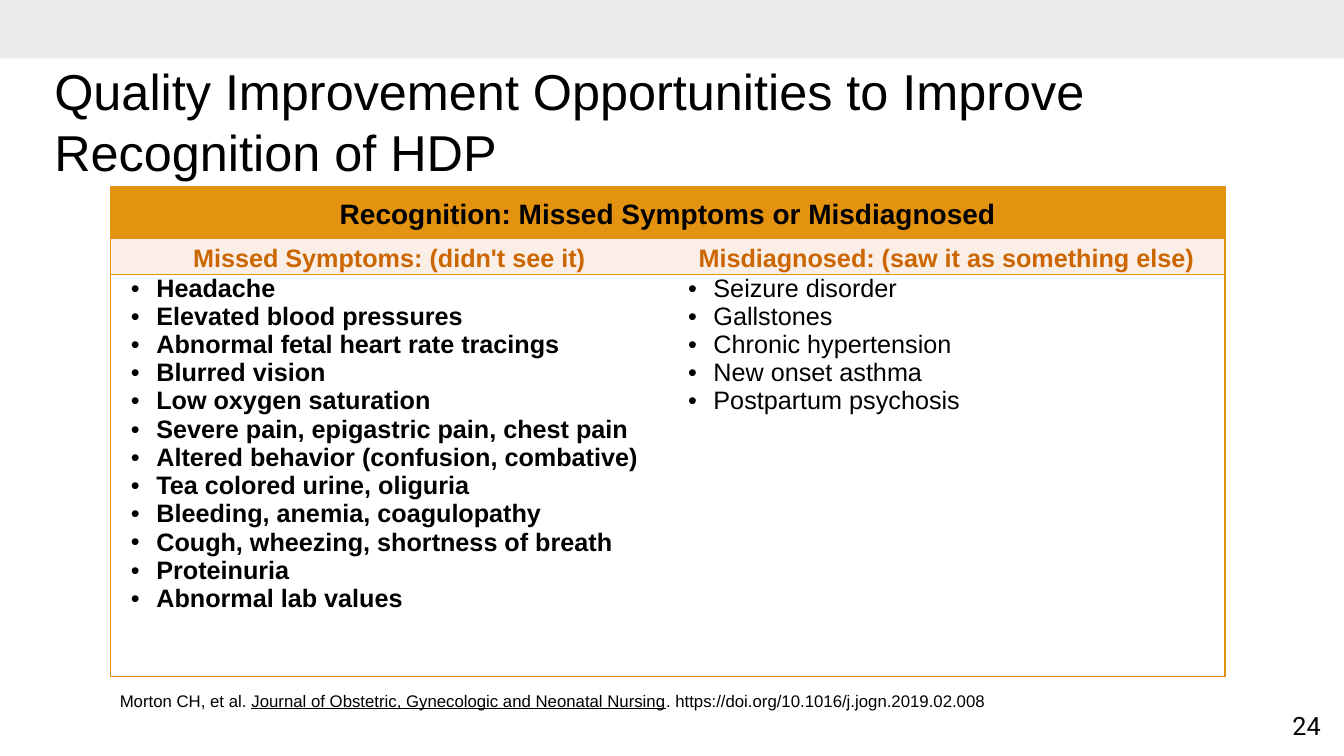
from pptx import Presentation
from pptx import util as u
from pptx.dml.color import RGBColor
from pptx.enum import shapes, text
from pptx.oxml import ns
from lxml import etree

Cm = u.Cm
hues = {"band": "E3E3E3", "gold": "E39310", "cream": "FAEEE7",
        "rust": "CC6600", "black": "000000", "white": "FFFFFF"}

deck = Presentation()
deck.slide_width, deck.slide_height = Cm(33.87), Cm(19.05)
slide = deck.slides.add_slide(deck.slide_layouts[6])


def style(para, size, hue="black", bold=False, face="Arial"):
    for run in para.runs:
        run.font.size = u.Pt(size)
        run.font.name = face
        run.font.bold = bold
        run.font.color.rgb = RGBColor.from_string(hues[hue])


def edge(cell, sides):
    props = cell._tc.get_or_add_tcPr()
    for i, side in enumerate("LRTB"):
        line = etree.Element(ns.qn("a:ln" + side), w=str(u.Pt(1)))
        if side in sides:
            fill = etree.SubElement(line, ns.qn("a:solidFill"))
            etree.SubElement(fill, ns.qn("a:srgbClr"), val=hues["gold"])
        else:
            etree.SubElement(line, ns.qn("a:noFill"))
        props.insert(i, line)


band = slide.shapes.add_shape(shapes.MSO_SHAPE.RECTANGLE, 0, 0, Cm(33.87), Cm(1.47))
band.shadow.inherit = False
band.line.fill.background()
band.fill.solid()
band.fill.fore_color.rgb = RGBColor.from_string(hues["band"])
tint = band._element.spPr.find(".//" + ns.qn("a:srgbClr"))
etree.SubElement(tint, ns.qn("a:alpha"), val="70000")

page = slide.shapes.add_textbox(Cm(32.28), Cm(17.78), Cm(1.3), Cm(1.02)).text_frame
page.text = "24"
page.paragraphs[0].alignment = text.PP_ALIGN.CENTER
style(page.paragraphs[0], 18, face="Roboto")

title = slide.shapes.add_textbox(Cm(1.12), Cm(1.78), Cm(28.78), Cm(2.54)).text_frame
title.word_wrap = True
title.vertical_anchor = text.MSO_ANCHOR.MIDDLE
title.text = "Quality Improvement Opportunities to Improve Recognition of HDP"
style(title.paragraphs[0], 36)

missed = ["Headache", "Elevated blood pressures", "Abnormal fetal heart rate tracings",
          "Blurred vision", "Low oxygen saturation",
          "Severe pain, epigastric pain, chest pain",
          "Altered behavior (confusion, combative)", "Tea colored urine, oliguria",
          "Bleeding, anemia, coagulopathy", "Cough, wheezing, shortness of breath",
          "Proteinuria", "Abnormal lab values"]
wrong = ["Seizure disorder", "Gallstones", "Chronic hypertension",
         "New onset asthma", "Postpartum psychosis"]
rows = [
    (1.32, "gold", 20, "black", [["Recognition: Missed Symptoms or Misdiagnosed"], []]),
    (0.89, "cream", 18, "rust", [["Missed Symptoms: (didn't see it)"],
                                 ["Misdiagnosed: (saw it as something else)"]]),
    (10.13, "white", 18, "black", [missed, wrong]),
]

grid = slide.shapes.add_table(3, 2, Cm(2.79), Cm(4.7), Cm(28.08), Cm(12.34)).table
grid.first_row = grid.horz_banding = False
grid.cell(0, 0).merge(grid.cell(0, 1))
for r, (height, back, size, hue, lists) in enumerate(rows):
    grid.rows[r].height = Cm(height)
    for c, items in enumerate(lists):
        cell = grid.cell(r, c)
        cell.margin_left = cell.margin_right = Cm(0.18)
        cell.margin_top = cell.margin_bottom = 0
        cell.fill.solid()
        cell.fill.fore_color.rgb = RGBColor.from_string(hues[back])
        edge(cell, "LRTB" if r == 0 else "LTB" if c == 0 else "RTB")
        if not items:
            continue
        cell.text_frame.text = "\n".join(items)
        if r < 2:
            cell.vertical_anchor = text.MSO_ANCHOR.MIDDLE
        for para in cell.text_frame.paragraphs:
            if r < 2:
                para.alignment = text.PP_ALIGN.CENTER
                para.line_spacing = 1.15
            else:
                props = para._p.get_or_add_pPr()
                props.set("marL", str(Cm(0.97)))
                props.set("indent", str(Cm(-0.64)))
                etree.SubElement(props, ns.qn("a:buFont"), typeface="Arial")
                etree.SubElement(props, ns.qn("a:buChar"), char="•")
            style(para, size, hue, bold=r < 2 or c == 0)
for col in grid.columns:
    col.width = Cm(14.04)

cite = slide.shapes.add_textbox(Cm(2.77), Cm(17.27), Cm(30.1), Cm(0.76)).text_frame
cite.word_wrap = True
for part in ["Morton CH, et al. ",
             "Journal of Obstetric, Gynecologic and Neonatal Nursing",
             ". https://doi.org/10.1016/j.jogn.2019.02.008"]:
    run = cite.paragraphs[0].add_run()
    run.text = part
    run.font.underline = part.startswith("Journal")
style(cite.paragraphs[0], 12)

deck.save("out.pptx")
